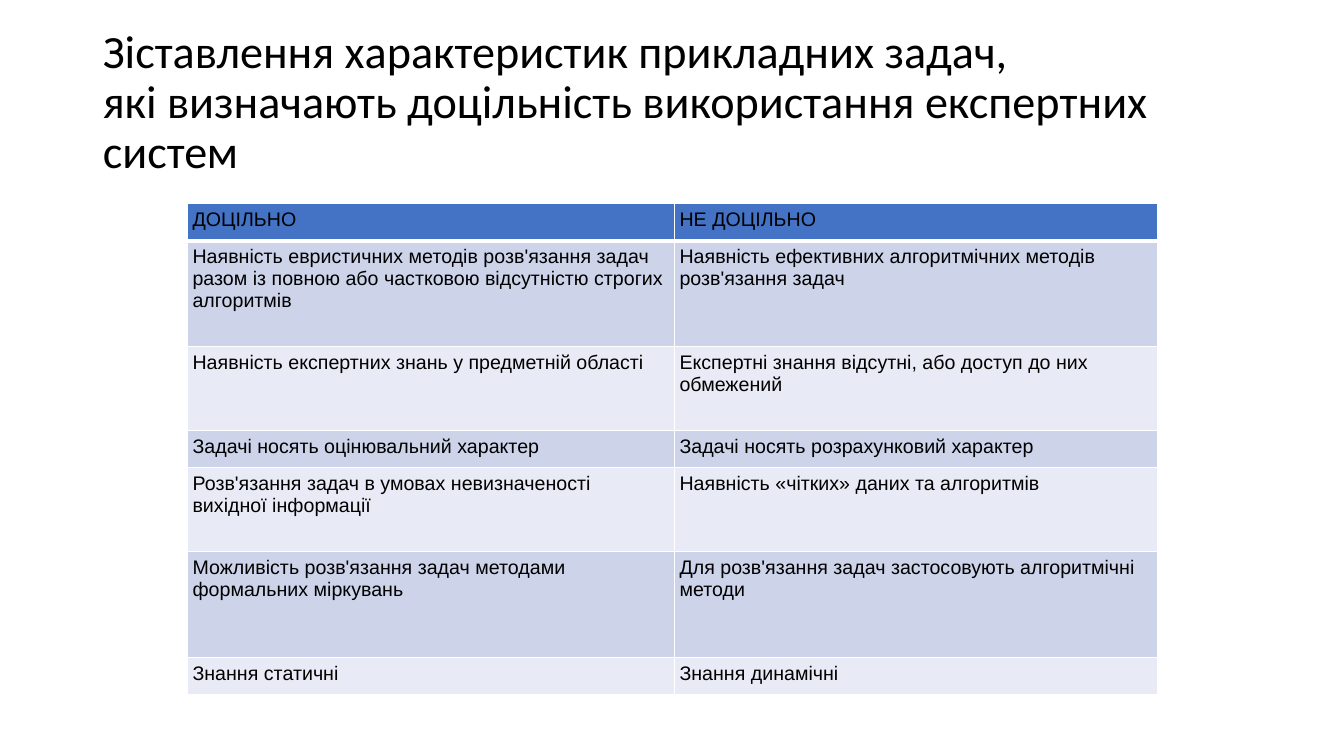
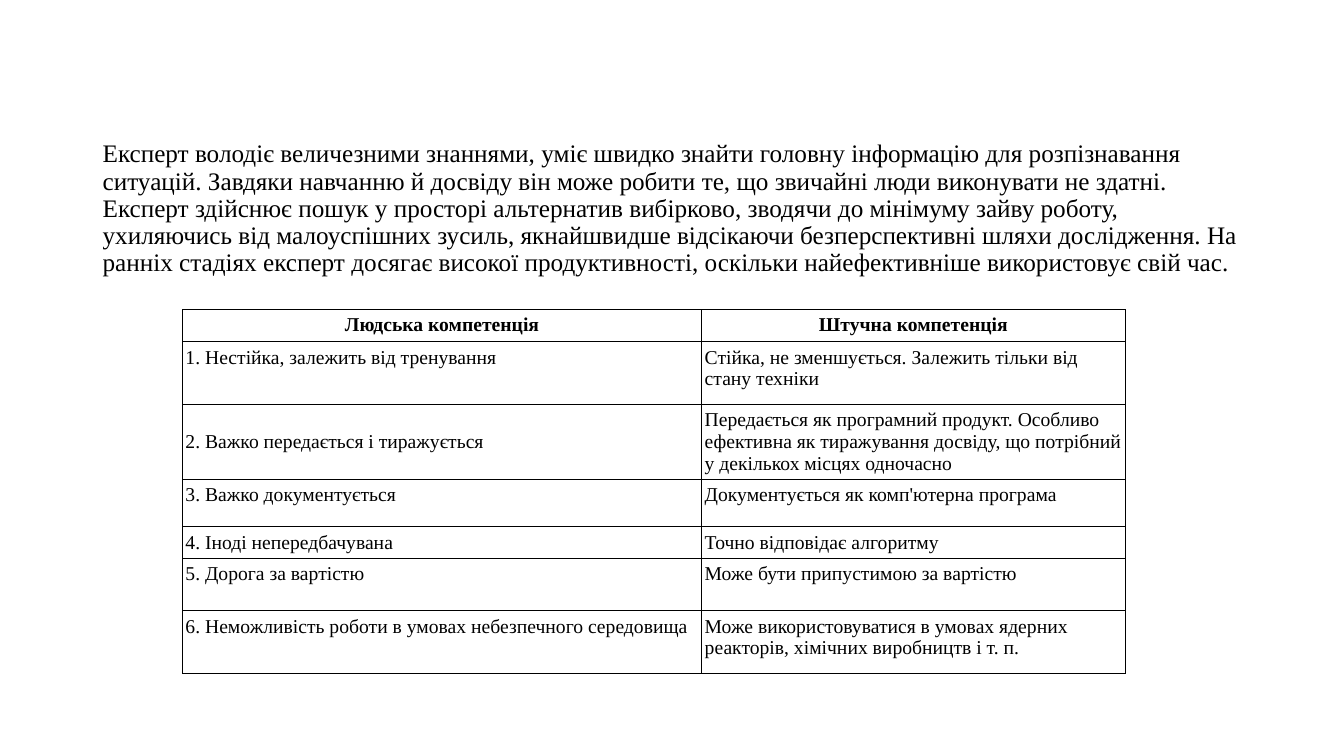
import pptx
import pptx.dml.color
import pptx.enum.text
import pptx.oxml
import pptx.oxml.ns
import pptx.util
from pptx.util import Inches

BLACK, WHITE = "000000", "FFFFFF"
HEADER_BLUE = "4472C4"
BANDS = ("CDD4EA", "E8EBF5")
TEXT_LEFT, TEXT_WIDTH = 0.92, 11.5
TOP = pptx.enum.text.MSO_ANCHOR.TOP
MIDDLE = pptx.enum.text.MSO_ANCHOR.MIDDLE
LEFT = pptx.enum.text.PP_ALIGN.LEFT
CENTER = pptx.enum.text.PP_ALIGN.CENTER

SUITABILITY = [
    ("ДОЦІЛЬНО", "НЕ ДОЦІЛЬНО"),
    ("Наявність евристичних методів розв'язання задач разом із повною або "
     "частковою відсутністю строгих алгоритмів",
     "Наявність ефективних алгоритмічних методів розв'язання задач"),
    ("Наявність експертних знань у предметній області",
     "Експертні знання відсутні, або доступ до них обмежений"),
    ("Задачі носять оцінювальний характер",
     "Задачі носять розрахунковий характер"),
    ("Розв'язання задач в умовах невизначеності вихідної інформації",
     "Наявність «чітких» даних та алгоритмів"),
    ("Можливість розв'язання задач методами формальних міркувань",
     "Для розв'язання задач застосовують алгоритмічні методи"),
    ("Знання статичні", "Знання динамічні"),
]

COMPETENCE = [
    ("Людська компетенція", "Штучна компетенція"),
    ("1. Нестійка, залежить від тренування",
     "Стійка, не зменшується. Залежить тільки від стану техніки"),
    ("2. Важко передається і тиражується",
     "Передається як програмний продукт. Особливо ефективна як тиражування "
     "досвіду, що потрібний у декількох місцях одночасно"),
    ("3. Важко документується", "Документується як комп'ютерна програма"),
    ("4. Іноді непередбачувана", "Точно відповідає алгоритму"),
    ("5. Дорога за вартістю", "Може бути припустимою за вартістю"),
    ("6. Неможливість роботи в умовах небезпечного середовища",
     "Може використовуватися в умовах ядерних реакторів, хімічних виробництв "
     "і т. п."),
]

EXPERT = (
    "Експерт володіє величезними знаннями, уміє швидко знайти головну "
    "інформацію для розпізнавання ситуацій. Завдяки навчанню й досвіду він "
    "може робити те, що звичайні люди виконувати не здатні. Експерт здійснює "
    "пошук у просторі альтернатив вибірково, зводячи до мінімуму зайву роботу, "
    "ухиляючись від малоуспішних зусиль, якнайшвидше відсікаючи безперспективні "
    "шляхи дослідження. На ранніх стадіях експерт досягає високої "
    "продуктивності, оскільки найефективніше використовує свій час."
)


def rgb(value):
    """Turn a hex string into a colour."""
    return pptx.dml.color.RGBColor.from_string(value)


def style(paragraph, font, size, bold=False, align=LEFT):
    """Format one paragraph."""
    paragraph.alignment = align
    paragraph.font.name = font
    paragraph.font.size = pptx.util.Pt(size)
    paragraph.font.bold = bold
    paragraph.font.color.rgb = rgb(BLACK)


def fill_text(holder, text, font, size, anchor):
    """Write a wrapped block of text with tight lines."""
    frame = holder.text_frame
    frame.text = text
    frame.word_wrap = True
    frame.auto_size = pptx.enum.text.MSO_AUTO_SIZE.NONE
    frame.vertical_anchor = anchor
    style(frame.paragraphs[0], font, size)
    frame.paragraphs[0].line_spacing = 0.9


def add_borders(cell, color, widths):
    """Draw the left, right, top and bottom borders of a cell."""
    properties = cell._tc.get_or_add_tcPr()
    for side, width in zip("LRTB", widths):
        properties.append(pptx.oxml.parse_xml(
            f'<a:ln{side} {pptx.oxml.ns.nsdecls("a")} w="{pptx.util.Pt(width)}">'
            f'<a:solidFill><a:srgbClr val="{color}"/></a:solidFill></a:ln{side}>'))


def add_grid(slide, left, top, columns, heights, rows, font, margin, fills,
             border, line, header_line, bold_header=False, middle_rows=()):
    """Place a two-column comparison table."""
    table = slide.shapes.add_table(
        len(rows), len(columns), Inches(left), Inches(top),
        Inches(sum(columns)), Inches(sum(heights))).table
    table.first_row = table.horz_banding = False
    for column, width in zip(table.columns, columns):
        column.width = Inches(width)
    for index, (row, height, texts) in enumerate(zip(table.rows, heights, rows)):
        row.height = Inches(height)
        is_header = index == 0
        above = header_line if index == 1 else line
        below = header_line if is_header else line
        for cell, text in zip(row.cells, texts):
            add_borders(cell, border, (line, line, above, below))
            cell.fill.solid()
            cell.fill.fore_color.rgb = rgb(fills[index])
            cell.margin_left = cell.margin_right = Inches(margin)
            cell.margin_top = cell.margin_bottom = Inches(0.05)
            cell.vertical_anchor = MIDDLE if index in middle_rows else TOP
            cell.text = text
            bold = is_header and bold_header
            style(cell.text_frame.paragraphs[0], font, 14, bold,
                  CENTER if bold else LEFT)


def suitability_slide(deck):
    """Build the slide on when expert systems are suitable."""
    slide = deck.slides.add_slide(deck.slide_layouts[5])
    title = slide.shapes.title
    title.left, title.top = Inches(TEXT_LEFT), Inches(0.2)
    title.width, title.height = Inches(TEXT_WIDTH), Inches(1.65)
    fill_text(title, "Зіставлення характеристик прикладних задач,\vякі визначають "
              "доцільність використання експертних систем", "Calibri", 33, MIDDLE)
    add_grid(slide, 1.86, 2.02, (4.83, 4.79),
             (0.37, 1.05, 0.83, 0.37, 0.83, 1.05, 0.37), SUITABILITY,
             "Arial", 0.05, (HEADER_BLUE, *BANDS * 3), WHITE, 1, 3)


def competence_slide(deck):
    """Build the slide comparing human and artificial competence."""
    slide = deck.slides.add_slide(deck.slide_layouts[6])
    expert = slide.shapes.add_textbox(
        Inches(TEXT_LEFT), Inches(1.35), Inches(TEXT_WIDTH), Inches(1.6))
    fill_text(expert, EXPERT, "Times New Roman", 18, TOP)
    add_grid(slide, 1.81, 3.07, (5.15, 4.2),
             (0.32, 0.62, 0.74, 0.47, 0.31, 0.52, 0.62), COMPETENCE,
             "Times New Roman", 0.03, (WHITE,) * len(COMPETENCE), BLACK,
             0.75, 0.75, bold_header=True, middle_rows=(2,))


def main():
    """Build and save the deck."""
    deck = pptx.Presentation()
    deck.slide_width, deck.slide_height = Inches(13.33), Inches(7.5)
    suitability_slide(deck)
    competence_slide(deck)
    deck.save("out.pptx")


if __name__ == "__main__":
    main()
